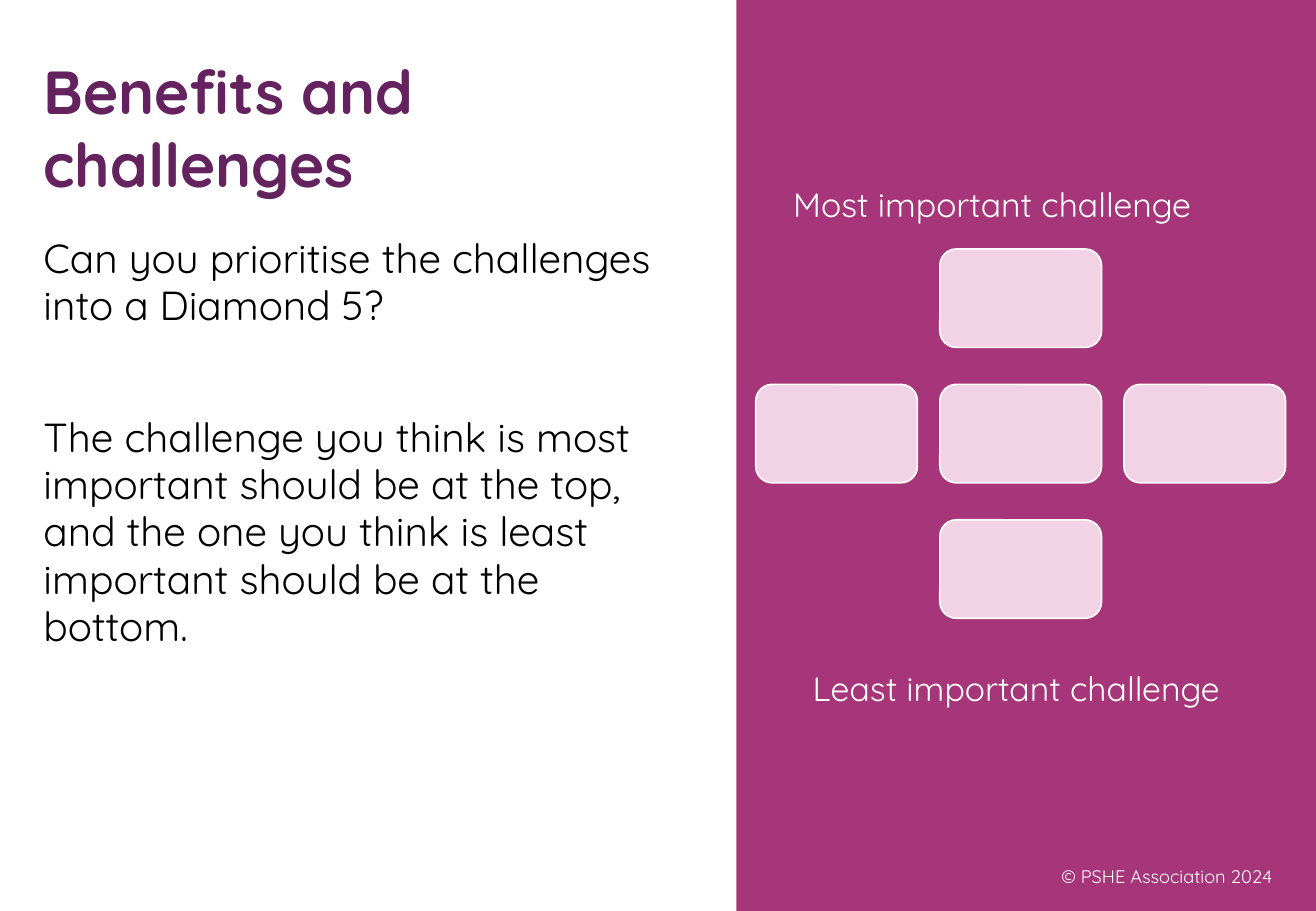
import pptx
import pptx.util
import pptx.dml.color
import pptx.enum.shapes
import pptx.enum.text

Inches = pptx.util.Inches
Pt = pptx.util.Pt
RGBColor = pptx.dml.color.RGBColor
SHAPE = pptx.enum.shapes.MSO_SHAPE
ANCHOR = pptx.enum.text.MSO_ANCHOR
ALIGN = pptx.enum.text.PP_ALIGN

FONT = "Quicksand"
WHITE = RGBColor(0xFF, 0xFF, 0xFF)
BLACK = RGBColor(0x00, 0x00, 0x00)
PURPLE = RGBColor(0x64, 0x23, 0x5E)
MAGENTA = RGBColor(0xA6, 0x36, 0x79)
PINK = RGBColor(0xF1, 0xD3, 0xE5)

CARD_LEFT, CARD_TOP = 6.22, 2.05
CARD_WIDTH, CARD_HEIGHT = 1.33, 0.81
COLUMN_STEP, ROW_STEP = 1.515, 1.115
DIAMOND = [(1, 0), (0, 1), (1, 1), (2, 1), (1, 2)]


def add_box(s, kind, left, top, width, height, fill, line=None):
    sp = s.shapes.add_shape(kind, Inches(left), Inches(top), Inches(width), Inches(height))
    sp.shadow.inherit = False
    sp.fill.solid()
    sp.fill.fore_color.rgb = fill
    if line is None:
        sp.line.fill.background()
    else:
        sp.line.color.rgb = line
        sp.line.width = Pt(1)


def add_text(s, left, top, width, height, paragraphs, size, color, bold=False,
             align=ALIGN.LEFT, anchor=ANCHOR.TOP, line_spacing=None, gap=0):
    sp = s.shapes.add_textbox(Inches(left), Inches(top), Inches(width), Inches(height))
    tf = sp.text_frame
    tf.word_wrap = True
    tf.vertical_anchor = anchor
    for i, text in enumerate(paragraphs):
        p = tf.add_paragraph() if i else tf.paragraphs[0]
        p.text = text
        p.alignment = align
        if line_spacing:
            p.line_spacing = Pt(line_spacing)
        if i:
            p.space_before = Pt(gap)
        p.font.name = FONT
        p.font.size = Pt(size)
        p.font.bold = bold
        p.font.color.rgb = color


def add_diamond(s):
    for column, row in DIAMOND:
        add_box(s, SHAPE.ROUNDED_RECTANGLE,
                CARD_LEFT + column * COLUMN_STEP, CARD_TOP + row * ROW_STEP,
                CARD_WIDTH, CARD_HEIGHT, PINK, WHITE)


def main():
    prs = pptx.Presentation()
    prs.slide_width = Inches(10.83)
    prs.slide_height = Inches(7.5)
    s = prs.slides.add_slide(prs.slide_layouts[6])

    add_box(s, SHAPE.RECTANGLE, 6.06, 0, 4.77, 7.5, MAGENTA)
    add_text(s, 0.26, 1.88, 5.34, 4.7, [
        "Can you prioritise the challenges into a Diamond 5?",
        "The challenge you think is most important should be at the top, "
        "and the one you think is least important should be at the bottom.",
    ], 24, BLACK, line_spacing=28, gap=50)
    add_text(s, 0.26, 0.69, 5.34, 1, ["Benefits and challenges"], 36, PURPLE,
             bold=True, anchor=ANCHOR.BOTTOM, line_spacing=43)
    add_text(s, 8.13, 7.01, 2.44, 0.4, ["© PSHE Association 2024"], 10.8, WHITE,
             align=ALIGN.RIGHT, anchor=ANCHOR.MIDDLE)
    add_diamond(s)
    add_text(s, 6.43, 1.46, 4.24, 0.44, ["Most important challenge"], 20, WHITE)
    add_text(s, 6.59, 5.45, 4.24, 0.44, ["Least important challenge"], 20, WHITE)

    prs.save("out.pptx")


if __name__ == "__main__":
    main()
